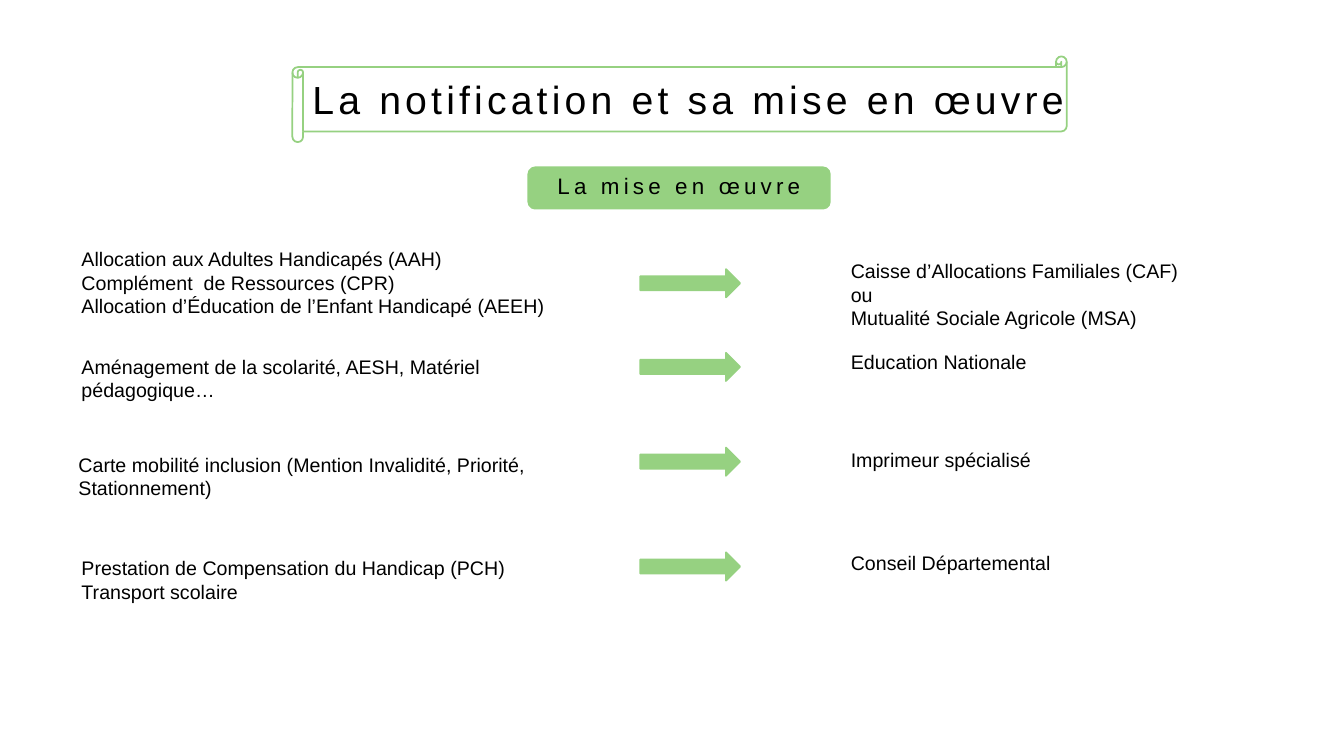
"""Build the slide on how decisions are carried out and by which body."""
from dataclasses import dataclass

from pptx import Presentation
from pptx.dml.color import RGBColor
from pptx.enum.shapes import MSO_SHAPE
from pptx.enum.text import MSO_AUTO_SIZE, PP_ALIGN
from pptx.slide import Slide
from pptx.util import Inches, Pt

ROUNDED, ARROW, SCROLL = (
    MSO_SHAPE.ROUNDED_RECTANGLE, MSO_SHAPE.RIGHT_ARROW, MSO_SHAPE.HORIZONTAL_SCROLL)
LEFT, CENTER = PP_ALIGN.LEFT, PP_ALIGN.CENTER
GROW = MSO_AUTO_SIZE.SHAPE_TO_FIT_TEXT
GREEN = RGBColor(0x96, 0xD1, 0x81)
BLACK = RGBColor(0, 0, 0)
WHITE = RGBColor(0xFF, 0xFF, 0xFF)
LINE_HEIGHT = 0.235


@dataclass(frozen=True)
class Box:
    left: float
    top: float
    width: float
    height: float

    def lengths(self) -> tuple[Inches, Inches, Inches, Inches]:
        return (Inches(self.left), Inches(self.top),
                Inches(self.width), Inches(self.height))


@dataclass(frozen=True)
class Referral:
    benefits: tuple[str, ...]
    benefits_left: float
    benefits_top: float
    benefits_width: float
    benefits_lines: int
    arrow_top: float
    bodies: tuple[str, ...]
    bodies_top: float


REFERRALS = (
    Referral(("Allocation aux Adultes Handicapés (AAH)",
              "Complément  de Ressources (CPR)",
              "Allocation d’Éducation de l’Enfant Handicapé (AEEH)"),
             0.71, 2.4, 4.85, 3, 2.67,
             ("Caisse d’Allocations Familiales (CAF) ou",
              "Mutualité Sociale Agricole (MSA)"), 2.52),
    Referral(("Aménagement de la scolarité, AESH, Matériel pédagogique…",),
             0.71, 3.47, 5.01, 2, 3.5, ("Education Nationale",), 3.42),
    Referral(("Carte mobilité inclusion (Mention Invalidité, Priorité,",
              "Stationnement)"),
             0.68, 4.44, 5.37, 2, 4.44, ("Imprimeur spécialisé",), 4.39),
    Referral(("Prestation de Compensation du Handicap (PCH)", "Transport scolaire"),
             0.71, 5.47, 5.37, 2, 5.48, ("Conseil Départemental",), 5.42),
)


def add_outline(slide: Slide, kind: MSO_SHAPE, box: Box, filled: bool = True) -> None:
    outline = slide.shapes.add_shape(kind, *box.lengths())
    outline.shadow.inherit = False
    if filled:
        outline.fill.solid()
        outline.fill.fore_color.rgb = GREEN
    else:
        outline.fill.background()
    outline.line.color.rgb = GREEN
    outline.line.width = Pt(1.25)


def add_text(slide: Slide, box: Box, lines: tuple[str, ...], size: int = 14,
             align: PP_ALIGN = LEFT, spacing: int = 0) -> None:
    frame = slide.shapes.add_textbox(*box.lengths()).text_frame
    frame.word_wrap = True
    frame.auto_size = GROW
    frame.text = "\n".join(lines)
    for paragraph in frame.paragraphs:
        paragraph.alignment = align
        paragraph.font.name = "Arial"
        paragraph.font.size = Pt(size)
        paragraph.font.color.rgb = BLACK
        if spacing:
            for run in paragraph.runs:
                run._r.get_or_add_rPr().set("spc", str(spacing * 100))


def add_referral(slide: Slide, referral: Referral) -> None:
    benefits_height = 0.1 + LINE_HEIGHT * referral.benefits_lines
    bodies_height = 0.1 + LINE_HEIGHT * len(referral.bodies)
    add_text(slide, Box(referral.benefits_left, referral.benefits_top,
                        referral.benefits_width, benefits_height), referral.benefits)
    add_outline(slide, ARROW, Box(6.35, referral.arrow_top, 0.99, 0.28))
    add_text(slide, Box(8.34, referral.bodies_top, 3.64, bodies_height),
             referral.bodies)


def main() -> None:
    deck = Presentation()
    deck.slide_width, deck.slide_height = Inches(13.33), Inches(7.5)
    slide = deck.slides.add_slide(deck.slide_layouts[6])
    slide.background.fill.solid()
    slide.background.fill.fore_color.rgb = WHITE
    add_outline(slide, ROUNDED, Box(5.24, 1.66, 2.99, 0.41))
    add_text(slide, Box(5.32, 1.66, 2.83, 0.37), ("La mise en œuvre",), 16, CENTER, 3)
    for referral in REFERRALS:
        add_referral(slide, referral)
    add_text(slide, Box(3, 0.7, 7.86, 0.57),
             ("La notification et sa mise en œuvre",), 28, spacing=3)
    add_outline(slide, SCROLL, Box(2.9, 0.56, 7.68, 0.85), filled=False)
    deck.save("out.pptx")


if __name__ == "__main__":
    main()
